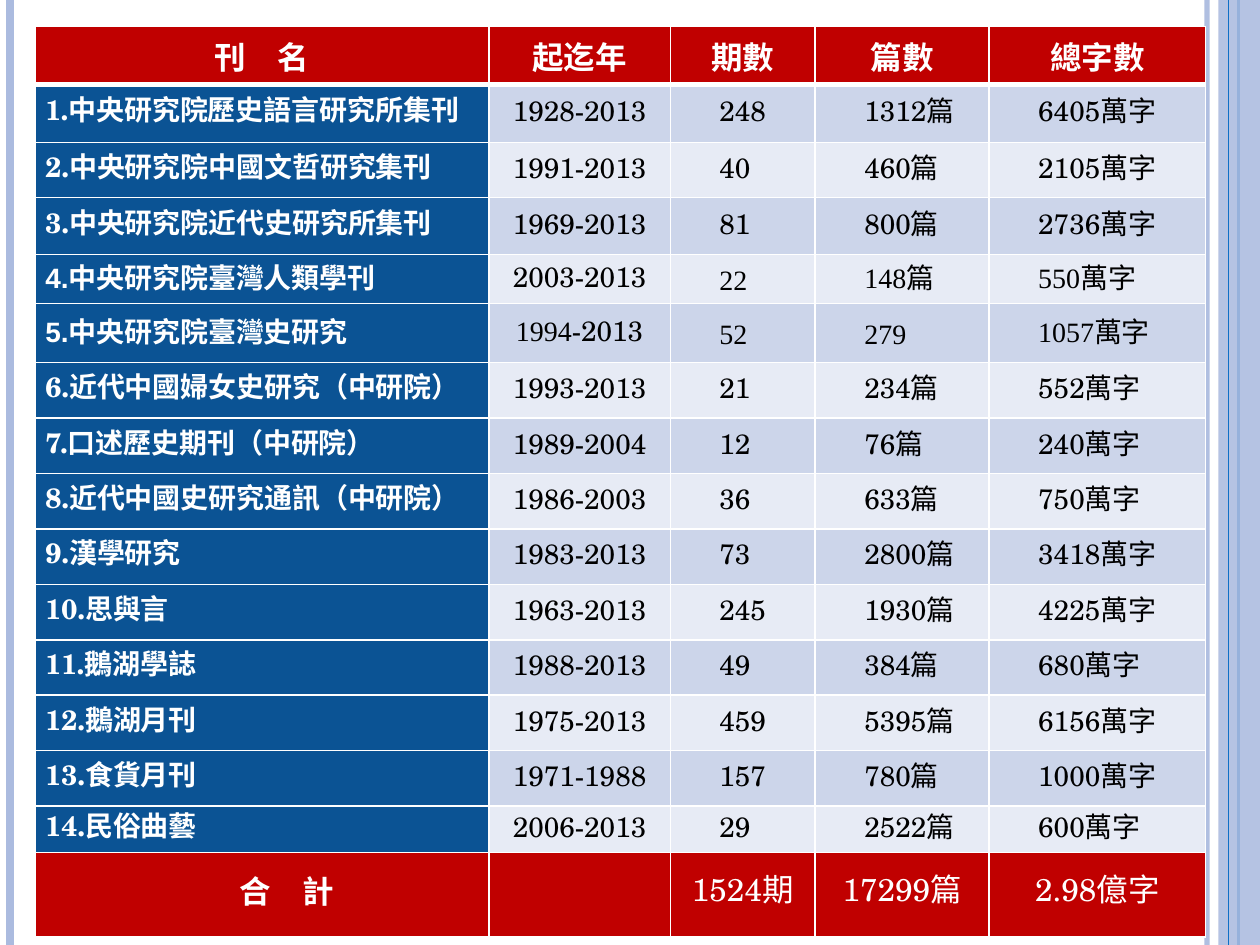
from dataclasses import dataclass

from lxml import etree
from pptx import Presentation
from pptx import util as u
from pptx.dml.color import RGBColor
from pptx.enum import shapes, text
from pptx.oxml import ns


@dataclass(frozen=True)
class Theme:
    white: str = "FFFFFF"
    black: str = "000000"
    red: str = "C00000"
    navy: str = "0B5394"
    bands: tuple = ("CCD5EA", "E7EBF5")
    stripe: str = "ABBBDF"
    accent: str = "0F6FC6"
    serif: str = "TeX Gyre Schola"
    sans: str = "Arial"
    roman: str = "Times New Roman"
    head_size: int = 18
    body_size: int = 16
    leading: int = 20


class SlideBuilder:
    """Holds the theme and the current slide."""

    def __init__(self, slide, theme):
        self.slide = slide
        self.theme = theme

    def set_alpha(self, fill_parent, percent):
        color = fill_parent.find(".//" + ns.qn("a:srgbClr"))
        etree.SubElement(color, ns.qn("a:alpha")).set("val", str(percent * 1000))

    def rule(self, x, color, width, alpha=None):
        """Vertical line over the full slide height."""
        line = self.slide.shapes.add_connector(
            shapes.MSO_CONNECTOR.STRAIGHT,
            u.Inches(x), 0, u.Inches(x), u.Inches(7.5))
        line.line.color.rgb = RGBColor.from_string(color)
        line.line.width = u.Pt(width)
        properties = line._element.spPr
        if alpha:
            self.set_alpha(properties, alpha)
        etree.SubElement(properties, ns.qn("a:effectLst"))

    def panel(self, left, top, width, height, color, alpha):
        panel = self.slide.shapes.add_shape(
            shapes.MSO_SHAPE.RECTANGLE,
            *(u.Inches(v) for v in (left, top, width, height)))
        panel.shadow.inherit = False
        panel.fill.solid()
        panel.fill.fore_color.rgb = RGBColor.from_string(color)
        self.set_alpha(panel._element.spPr, alpha)
        panel.line.fill.background()

    def table(self, left, top, widths, heights):
        table = self.slide.shapes.add_table(
            len(heights), len(widths), u.Inches(left), u.Inches(top),
            u.Inches(sum(widths)), u.Inches(sum(heights))).table
        table.first_row = table.horz_banding = False
        for column, width in zip(table.columns, widths):
            column.width = u.Inches(width)
        for row, height in zip(table.rows, heights):
            row.height = u.Inches(height)
        return table

    def borders(self, cell, top, bottom):
        properties = cell._tc.get_or_add_tcPr()
        for side, width in (("L", 1), ("R", 1), ("T", top), ("B", bottom)):
            edge = etree.SubElement(properties, ns.qn("a:ln" + side),
                                    w=str(u.Pt(width)))
            fill = etree.SubElement(edge, ns.qn("a:solidFill"))
            etree.SubElement(fill, ns.qn("a:srgbClr"), val=self.theme.white)

    def cell(self, cell, runs, fill, color, size, bold=False, indent=None,
             leading=None, top=1, bottom=1):
        """Fill one cell; runs are (wording, font) pairs, no indent centres."""
        self.borders(cell, top, bottom)
        cell.fill.solid()
        cell.fill.fore_color.rgb = RGBColor.from_string(fill)
        layout = dict(margin_left=0, margin_right=0, margin_top=0,
                      margin_bottom=0, vertical_anchor=text.MSO_ANCHOR.MIDDLE)
        for name, value in layout.items():
            setattr(cell, name, value)
        paragraph = cell.text_frame.paragraphs[0]
        if leading:
            paragraph.line_spacing = u.Pt(leading)
        if indent is None:
            paragraph.alignment = text.PP_ALIGN.CENTER
        else:
            paragraph._p.get_or_add_pPr().set("marL", str(u.Inches(indent)))
        for wording, font in runs:
            run = paragraph.add_run()
            run.text = wording
            for name, value in dict(name=font, size=u.Pt(size), bold=bold).items():
                setattr(run.font, name, value)
            run.font.color.rgb = RGBColor.from_string(color)


HEADINGS = ("刊　名", "起迄年", "期數", "篇數", "總字數")
JOURNALS = (
    ("中央研究院歷史語言研究所集刊", "1928-2013", "248", "1312篇", "6405萬字"),
    ("中央研究院中國文哲研究集刊", "1991-2013", "40", "460篇", "2105萬字"),
    ("中央研究院近代史研究所集刊", "1969-2013", "81", "800篇", "2736萬字"),
    ("中央研究院臺灣人類學刊", "2003-2013", "22", "148篇", "550萬字"),
    ("中央研究院臺灣史研究", "1994-2013", "52", "279", "1057萬字"),
    ("近代中國婦女史研究（中研院）", "1993-2013", "21", "234篇", "552萬字"),
    ("口述歷史期刊（中研院）", "1989-2004", "12", "76篇", "240萬字"),
    ("近代中國史研究通訊（中研院）", "1986-2003", "36", "633篇", "750萬字"),
    ("漢學研究", "1983-2013", "73", "2800篇", "3418萬字"),
    ("思與言", "1963-2013", "245", "1930篇", "4225萬字"),
    ("鵝湖學誌", "1988-2013", "49", "384篇", "680萬字"),
    ("鵝湖月刊", "1975-2013", "459", "5395篇", "6156萬字"),
    ("食貨月刊", "1971-1988", "157", "780篇", "1000萬字"),
    ("民俗曲藝", "2006-2013", "29", "2522篇", "600萬字"),
)
TOTALS = ("合　計", "", "1524期", "17299篇", "2.98億字")
COLUMN_WIDTHS = (3.6, 1.44, 1.15, 1.38, 1.72)
ROW_HEIGHTS = (0.46, 0.46, 0.44, 0.45, 0.39, 0.47, *[0.44] * 8, 0.37, 0.67)
PLAIN_FONT_ROWS = (4, 5)  # journals set in the sans and roman faces


def main():
    theme = Theme()
    deck = Presentation()
    deck.slide_width, deck.slide_height = u.Inches(10), u.Inches(7.5)
    builder = SlideBuilder(deck.slides.add_slide(deck.slide_layouts[6]), theme)

    # Side stripes
    builder.rule(9.58, theme.stripe, 3, alpha=93)
    builder.rule(0.08, theme.stripe, 4.5)
    builder.rule(9.83, theme.accent, 1.5)
    builder.panel(9.67, 0, 0.33, 7.5, theme.stripe, alpha=87)
    builder.rule(9.75, theme.accent, 0.75)

    # Heading row
    journals = builder.table(0.28, 0.21, COLUMN_WIDTHS, ROW_HEIGHTS)
    for column, heading in enumerate(HEADINGS):
        builder.cell(journals.cell(0, column), [(heading, theme.serif)],
                     theme.red, theme.white, theme.head_size, bold=True, bottom=3)

    # One row per journal
    body = dict(size=theme.body_size, leading=theme.leading)
    for number, (title, years, *counts) in enumerate(JOURNALS, start=1):
        plain = number in PLAIN_FONT_ROWS
        band = theme.bands[(number - 1) % 2]
        top = 3 if number == 1 else 1
        title_font = theme.sans if plain else theme.serif
        count_font = theme.roman if plain else theme.serif
        start_font = theme.roman if number == 5 else theme.serif
        builder.cell(journals.cell(number, 0), [(f"{number}.{title}", title_font)],
                     theme.navy, theme.white, bold=True, indent=0.08, top=top, **body)
        year_runs = [(years, theme.serif)]
        if start_font != theme.serif:
            year_runs = [(years[:4], start_font), (years[4:], theme.serif)]
        builder.cell(journals.cell(number, 1), year_runs, band, theme.black,
                     top=top, **body)
        for column, count in enumerate(counts, start=2):
            builder.cell(journals.cell(number, column), [(count, count_font)],
                         band, theme.black, indent=0.39, top=top, **body)

    # Totals row
    last = len(JOURNALS) + 1
    for column, total in enumerate(TOTALS):
        runs = [(total, theme.serif)] if total else []
        cell = journals.cell(last, column)
        builder.cell(cell, runs, theme.red, theme.white, theme.head_size,
                     bold=column == 0, leading=theme.leading)
    label = journals.cell(last, 0).text_frame.paragraphs[0]
    label._p.get_or_add_pPr().set("marL", str(u.Inches(0.39)))

    deck.save("out.pptx")


if __name__ == "__main__":
    main()
